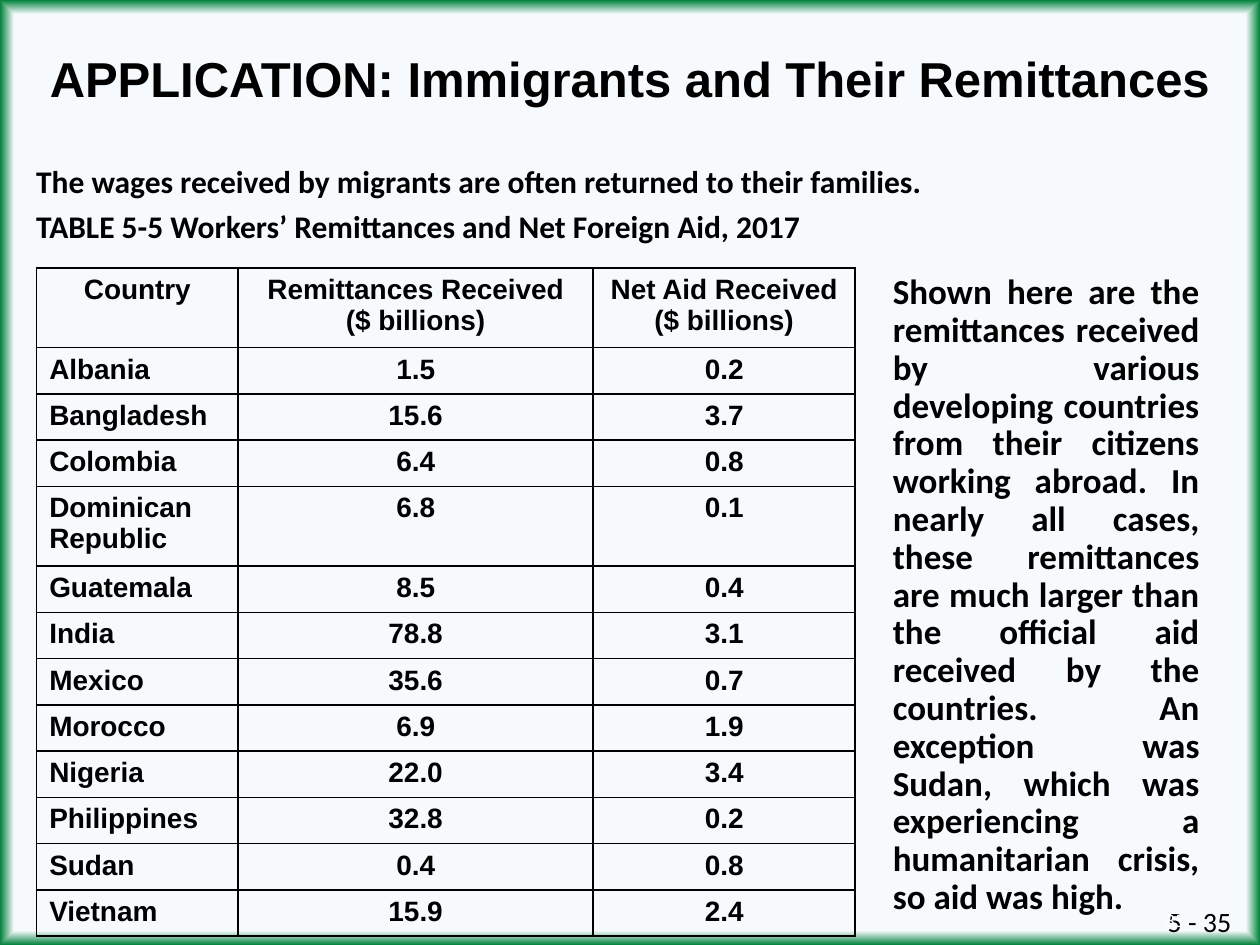
import pptx
import pptx.enum.text
import pptx.oxml
import pptx.oxml.ns
import pptx.util
from pptx.util import Cm

ALIGN = pptx.enum.text.PP_ALIGN
ANCHOR = pptx.enum.text.MSO_ANCHOR
COLORS = {"text": "000000", "page": "F7FAFD", "edge": "00823B", "pale": "FFFFFF"}
COLUMN_WIDTHS = (4.06, 7.16, 5.28)
HEADER_HEIGHT, ROW_HEIGHT, TALL_ROW_HEIGHT = 1.52, 0.88, 1.51
REMITTANCES = [
    ("Country", "Remittances Received\n($ billions)", "Net Aid Received\n($ billions)"),
    ("Albania", "1.5", "0.2"),
    ("Bangladesh", "15.6", "3.7"),
    ("Colombia", "6.4", "0.8"),
    ("Dominican Republic", "6.8", "0.1"),
    ("Guatemala", "8.5", "0.4"),
    ("India", "78.8", "3.1"),
    ("Mexico", "35.6", "0.7"),
    ("Morocco", "6.9", "1.9"),
    ("Nigeria", "22.0", "3.4"),
    ("Philippines", "32.8", "0.2"),
    ("Sudan", "0.4", "0.8"),
    ("Vietnam", "15.9", "2.4"),
]
INTRO = (
    "The wages received by migrants are often returned to their families.\n"
    "TABLE 5-5 Workers’ Remittances and Net Foreign Aid, 2017"
)
COMMENTARY = (
    "Shown here are the remittances received by various developing countries "
    "from their citizens working abroad. In nearly all cases, these remittances "
    "are much larger than the official aid received by the countries. An exception "
    "was Sudan, which was experiencing a humanitarian crisis, so aid was high."
)


def paint_background(slide):
    """Fill the page with a pale gradient that turns green at its edges."""
    stops = [(97, COLORS["page"]), (100, COLORS["edge"]), (100, "B5D2EC"), (100, "CEE1F2")]
    stop_xml = "".join(
        f'<a:gs pos="{percent * 1000}"><a:srgbClr val="{color}"/></a:gs>'
        for percent, color in stops
    )
    background = pptx.oxml.parse_xml(
        f'<p:bg {pptx.oxml.ns.nsdecls("p", "a")}><p:bgPr><a:gradFill rotWithShape="1">'
        f'<a:gsLst>{stop_xml}</a:gsLst><a:path path="shape">'
        '<a:fillToRect l="50000" t="50000" r="50000" b="50000"/></a:path>'
        "</a:gradFill><a:effectLst/></p:bgPr></p:bg>"
    )
    slide.element.find(pptx.oxml.ns.qn("p:cSld")).insert(0, background)


def write_text(frame, text, size, font="Calibri", bold=True, color="text",
               align=ALIGN.LEFT, spacing=None, gap=0):
    """Write and format paragraphs, with a gap between them in points."""
    frame.text = text
    for index, paragraph in enumerate(frame.paragraphs):
        paragraph.alignment = align
        if spacing:
            paragraph.line_spacing = spacing
        paragraph.space_before = pptx.util.Pt(gap if index else 0)
        paragraph.font.name = font
        paragraph.font.size = pptx.util.Pt(size)
        paragraph.font.bold = bold
        paragraph.font.color.rgb = pptx.dml.color.RGBColor.from_string(COLORS[color])


def add_title(slide, text):
    """Place the title placeholder across the top of the slide."""
    title = slide.shapes.title
    title.left, title.top, title.width, title.height = Cm(0.48), Cm(0.05), Cm(24.43), Cm(3.18)
    title.text_frame.vertical_anchor = ANCHOR.MIDDLE
    write_text(title.text_frame, text, 28, "Arial", align=ALIGN.CENTER, spacing=0.9)


def add_text(slide, box, text, size, wrap=True, anchor=ANCHOR.TOP, **style):
    """Add a text box whose place is given in centimetres."""
    frame = slide.shapes.add_textbox(*map(Cm, box)).text_frame
    frame.word_wrap = wrap
    frame.vertical_anchor = anchor
    write_text(frame, text, size, **style)


def draw_borders(cell):
    """Give a cell a thin line on each side."""
    properties = cell._tc.get_or_add_tcPr()
    for side in ("lnL", "lnR", "lnT", "lnB"):
        properties.append(pptx.oxml.parse_xml(
            f'<a:{side} {pptx.oxml.ns.nsdecls("a")} w="12700"><a:solidFill>'
            f'<a:srgbClr val="{COLORS["text"]}"/></a:solidFill></a:{side}>'
        ))


def add_remittance_table(slide):
    """Add the bordered table of remittances and aid by country."""
    heights = [TALL_ROW_HEIGHT if row[0] == "Dominican Republic" else ROW_HEIGHT
               for row in REMITTANCES]
    heights[0] = HEADER_HEIGHT
    table = slide.shapes.add_table(
        len(REMITTANCES), len(COLUMN_WIDTHS),
        Cm(0.74), Cm(5.4), Cm(sum(COLUMN_WIDTHS)), Cm(sum(heights)),
    ).table
    table.first_row = table.horz_banding = False
    for column, width in zip(table.columns, COLUMN_WIDTHS):
        column.width = Cm(width)
    for row_index, (values, height) in enumerate(zip(REMITTANCES, heights)):
        table.rows[row_index].height = Cm(height)
        for column_index, value in enumerate(values):
            cell = table.cell(row_index, column_index)
            is_country = row_index > 0 and column_index == 0
            write_text(cell.text_frame, value, 16, "Arial",
                       align=ALIGN.LEFT if is_country else ALIGN.CENTER)
            draw_borders(cell)
            cell.fill.background()


def main():
    """Build the slide and save it."""
    deck = pptx.Presentation()
    deck.slide_width, deck.slide_height = Cm(25.4), Cm(19.05)
    slide = deck.slides.add_slide(deck.slide_layouts[5])
    paint_background(slide)
    add_text(slide, (23.29, 18.11, 1.9, 0.94), "5 - 35", 16, wrap=False, bold=False)
    add_text(slide, (18.21, 18.03, 5.92, 1.02), "35", 11, anchor=ANCHOR.MIDDLE,
             bold=False, color="pale", align=ALIGN.RIGHT)
    add_title(slide, "APPLICATION: Immigrants and Their Remittances")
    add_text(slide, (0.48, 3.23, 24.43, 2.54), INTRO, 18, spacing=0.9, gap=6.2)
    add_text(slide, (17.75, 5.41, 6.68, 9.86), COMMENTARY, 20,
             align=ALIGN.JUSTIFY, spacing=0.9)
    add_remittance_table(slide)
    deck.save("out.pptx")


if __name__ == "__main__":
    main()
